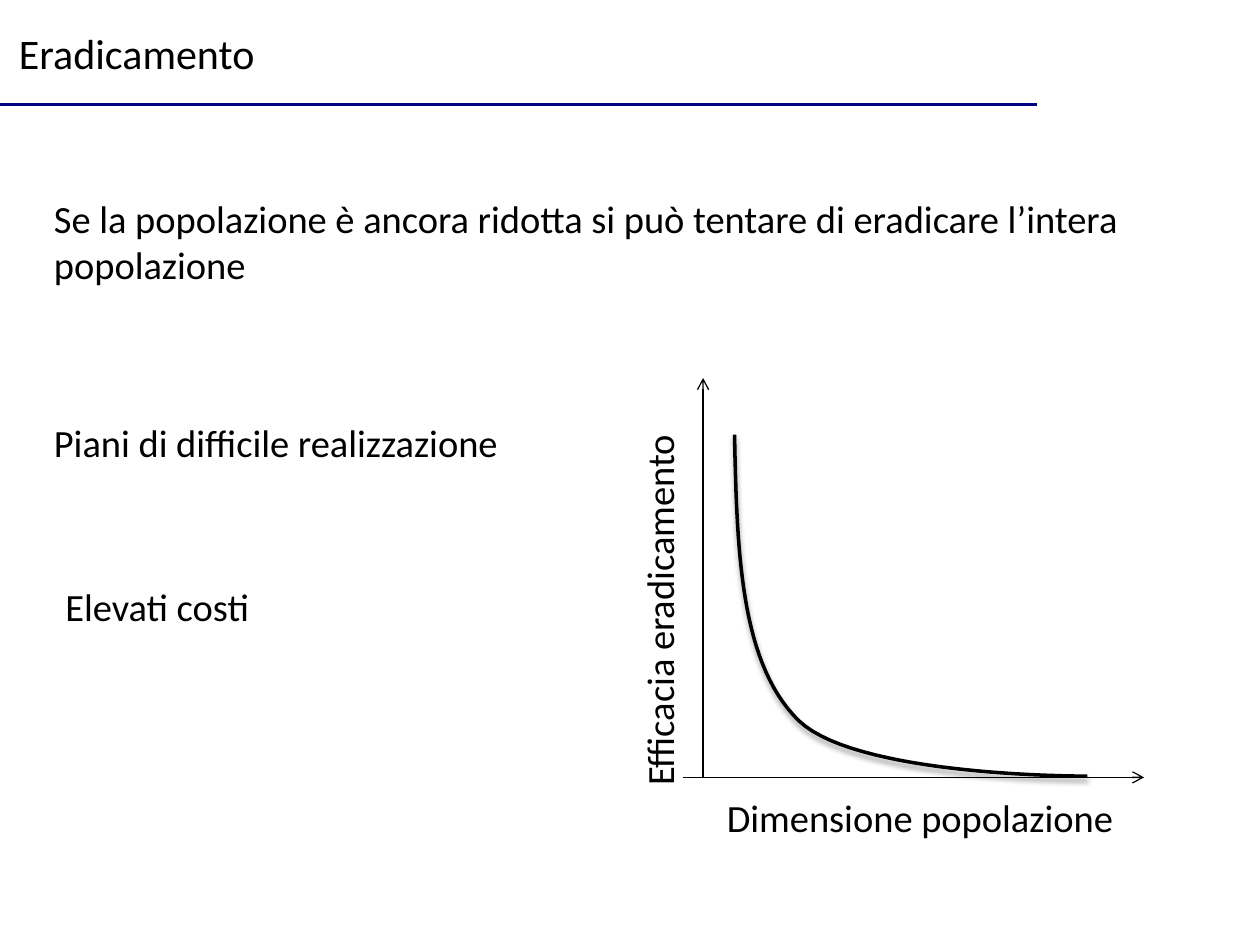
from lxml.etree import SubElement
from pptx import Presentation
from pptx.dml.color import RGBColor
from pptx.enum.shapes import MSO_CONNECTOR as Connector
from pptx.enum.text import MSO_ANCHOR as Anchor, MSO_AUTO_SIZE as AutoSize, PP_ALIGN as Align
from pptx.oxml.ns import qn
from pptx.util import Inches, Pt

BLACK = RGBColor(0x00, 0x00, 0x00)
NAVY = RGBColor(0x00, 0x00, 0x80)
FONT = "Calibri"
CURVE_STEPS = 30

# Left, top, width, height, rotation, text
LABELS = [
    (0.33, 1.5, 9.17, 3.43, 0,
     "Se la popolazione è ancora ridotta si può tentare di eradicare l’intera popolazione"),
    (0.33, 3.28, 9.17, 0.47, 0, "Piani di difficile realizzazione"),
    (0.42, 4.58, 2.25, 0.47, 0, "Elevati costi"),
    (5.67, 6.25, 3.58, 0.47, 0, "Dimensione popolazione"),
    (3.44, 4.31, 3.58, 0.47, 270, "Efficacia eradicamento"),
]

# Start, two control points and end of each Bézier segment
CURVE = [
    ((5.83, 3.45), (5.85, 4.36), (5.87, 5.26), (6.34, 5.72)),
    ((6.34, 5.72), (6.81, 6.17), (8.63, 6.16), (8.63, 6.16)),
]


def write_text(shape, text, size, wrap=True):
    frame = shape.text_frame
    frame.word_wrap = wrap
    frame.auto_size = AutoSize.SHAPE_TO_FIT_TEXT
    frame.vertical_anchor = Anchor.TOP
    para = frame.paragraphs[0]
    para.alignment = Align.LEFT
    run = para.add_run()
    run.text = text
    run.font.name = FONT
    run.font.size = Pt(size)
    run.font.color.rgb = BLACK


def place_title(slide, text):
    title = slide.shapes.title
    title.left, title.top = Inches(0.05), Inches(0.17)
    title.width, title.height = Inches(2.09), Inches(0.91)
    write_text(title, text, 24, wrap=False)


def add_label(slide, left, top, width, height, rotation, text):
    box = slide.shapes.add_textbox(Inches(left), Inches(top), Inches(width), Inches(height))
    box.rotation = rotation
    write_text(box, text, 22)


def add_line(slide, start, end, color, width, arrow=False):
    line = slide.shapes.add_connector(Connector.STRAIGHT, *map(Inches, start + end))
    line.line.color.rgb = color
    line.line.width = Pt(width)
    properties = line._element.spPr
    if arrow:
        SubElement(properties.find(qn("a:ln")), qn("a:tailEnd"), type="arrow")
    SubElement(properties, qn("a:effectLst"))


def bezier_point(segment, t):
    weights = ((1 - t) ** 3, 3 * t * (1 - t) ** 2, 3 * t ** 2 * (1 - t), t ** 3)
    return tuple(Inches(sum(w * point[axis] for w, point in zip(weights, segment)))
                 for axis in (0, 1))


def add_curve(slide, segments):
    points = [bezier_point(segment, step / CURVE_STEPS)
              for segment in segments for step in range(1, CURVE_STEPS + 1)]
    builder = slide.shapes.build_freeform(*map(Inches, segments[0][0]))
    builder.add_line_segments(points, close=False)
    curve = builder.convert_to_shape()
    curve.fill.background()
    curve.line.color.rgb = BLACK
    curve.line.width = Pt(2)
    add_soft_shadow(curve)


def add_soft_shadow(shape):
    shape.shadow.inherit = False
    effects = shape._element.spPr.find(qn("a:effectLst"))
    shadow = SubElement(effects, qn("a:outerShdw"), blurRad=str(Pt(3.1)), dist=str(Pt(1.6)),
                        dir="5400000", rotWithShape="0")
    color = SubElement(shadow, qn("a:srgbClr"), val=str(BLACK))
    SubElement(color, qn("a:alpha"), val="38000")


def main():
    deck = Presentation()
    deck.slide_width, deck.slide_height = Inches(10), Inches(7.5)
    slide = deck.slides.add_slide(deck.slide_layouts[5])

    # Heading and its rule
    add_line(slide, (0, 0.83), (8.23, 0.83), NAVY, 2)
    place_title(slide, "Eradicamento")

    # Axes and effectiveness curve
    add_line(slide, (5.58, 6.17), (5.58, 3), BLACK, 0.75, arrow=True)
    add_line(slide, (5.42, 6.17), (9.08, 6.17), BLACK, 0.75, arrow=True)
    add_curve(slide, CURVE)

    # Statements and axis titles
    for label in LABELS:
        add_label(slide, *label)

    deck.save("out.pptx")


if __name__ == "__main__":
    main()
